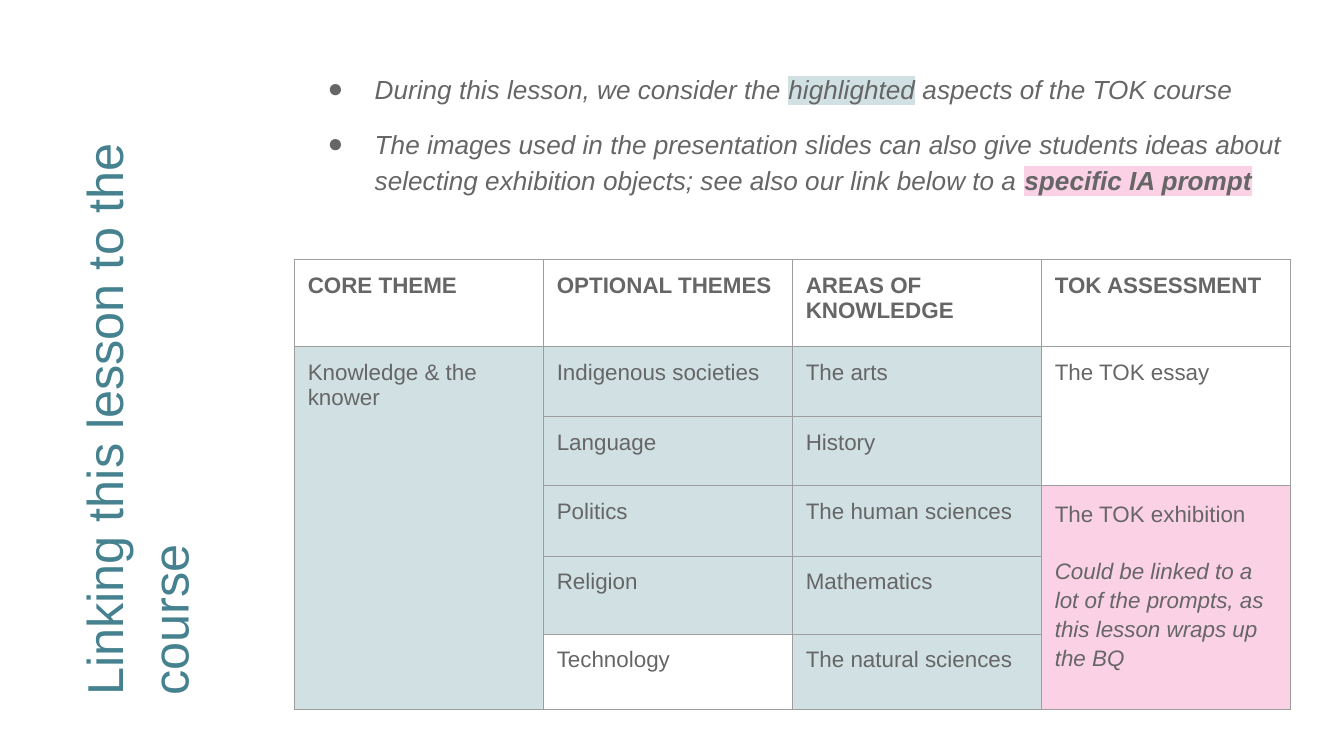
from dataclasses import dataclass

from lxml.etree import SubElement
from pptx import Presentation
from pptx.dml.color import RGBColor as Rgb
from pptx.enum.text import MSO_ANCHOR as Anchor
from pptx.oxml import parse_xml
from pptx.oxml.ns import nsdecls, qn
from pptx.util import Pt

COLORS = {
    "title": "45818E",
    "text": "666666",
    "covered": "D0E0E3",
    "assessed": "FBD1E6",
    "plain": "FFFFFF",
    "border": "9E9E9E",
}
FONT = "Arial"
INSET = 7.2
COLUMN_WIDTH = 133.4
ROW_HEIGHTS = [46.4, 37.4, 37, 38, 41.8, 40.2]


@dataclass
class Span:
    text: str
    highlight: str = ""
    bold: bool = False


@dataclass
class Entry:
    """One table cell; it may cover several rows."""
    text: str
    fill: str = "covered"
    rows: int = 1
    note: str = ""


BULLETS = [
    [Span("During this lesson, we consider the "), Span("highlighted", "covered"),
     Span(" aspects of the TOK course")],
    [Span("The images used in the presentation slides can also give students ideas about "
          "selecting exhibition objects; see also our link below to a "),
     Span("specific IA prompt", "assessed", True)],
]

COLUMNS = {
    "CORE THEME": [Entry("Knowledge & the knower", rows=5)],
    "OPTIONAL THEMES": [
        Entry("Indigenous societies"), Entry("Language"), Entry("Politics"),
        Entry("Religion"), Entry("Technology", "plain"),
    ],
    "AREAS OF KNOWLEDGE": [
        Entry("The arts"), Entry("History"), Entry("The human sciences"),
        Entry("Mathematics"), Entry("The natural sciences"),
    ],
    "TOK ASSESSMENT": [
        Entry("The TOK essay", "plain", 2),
        Entry("The TOK exhibition", "assessed", 3,
              "Could be linked to a lot of the prompts, as this lesson wraps up the BQ"),
    ],
}


def style(paragraph, size: float, color: str = "text", bold: bool = False,
          italic: bool = False) -> None:
    font = paragraph.font
    font.name, font.size, font.bold, font.italic = FONT, Pt(size), bold, italic
    font.color.rgb = Rgb.from_string(COLORS[color])


def add_text_frame(slide, left: float, top: float, width: float, height: float,
                   rotation: float = 0):
    box = slide.shapes.add_textbox(Pt(left), Pt(top), Pt(width), Pt(height))
    box.rotation = rotation
    frame = box.text_frame
    frame.word_wrap = True
    frame.vertical_anchor = Anchor.TOP
    frame.margin_left = frame.margin_right = Pt(INSET)
    frame.margin_top = frame.margin_bottom = Pt(INSET)
    return frame


def add_bullet(paragraph) -> None:
    properties = paragraph._p.get_or_add_pPr()
    properties.set("marL", str(Pt(36)))
    properties.set("indent", str(Pt(-25.2)))
    color = SubElement(properties, qn("a:buClr"))
    SubElement(color, qn("a:srgbClr"), val=COLORS["text"])
    SubElement(properties, qn("a:buFont"), typeface=FONT)
    SubElement(properties, qn("a:buChar"), char="●")


def add_span(paragraph, span: Span) -> None:
    run = paragraph.add_run()
    run.text = span.text
    if span.bold:
        run.font.bold = True
    if span.highlight:
        highlight = SubElement(run._r.get_or_add_rPr(), qn("a:highlight"))
        SubElement(highlight, qn("a:srgbClr"), val=COLORS[span.highlight])


def draw_title(slide) -> None:
    frame = add_text_frame(slide, -95, 153.4, 350.6, 102.2, rotation=270)
    paragraph = frame.paragraphs[0]
    paragraph.text = "Linking this lesson to the course"
    paragraph.line_spacing = 1.08
    style(paragraph, 27, "title")


def draw_bullets(slide) -> None:
    frame = add_text_frame(slide, 157.7, 29.5, 537.8, 87.8)
    for index, spans in enumerate(BULLETS):
        paragraph = frame.add_paragraph() if index else frame.paragraphs[0]
        paragraph.line_spacing = 1.15
        if index:
            paragraph.space_before = Pt(10)
        add_bullet(paragraph)
        style(paragraph, 14, italic=True)
        for span in spans:
            add_span(paragraph, span)


def format_cell(cell, fill: str) -> None:
    cell.margin_left = cell.margin_right = Pt(INSET)
    cell.margin_top = cell.margin_bottom = Pt(INSET)
    cell.fill.solid()
    cell.fill.fore_color.rgb = Rgb.from_string(COLORS[fill])
    properties = cell._tc.get_or_add_tcPr()
    for position, side in enumerate(("lnL", "lnR", "lnT", "lnB")):
        properties.insert(position, parse_xml(
            f'<a:{side} {nsdecls("a")} w="{Pt(0.75)}"><a:solidFill>'
            f'<a:srgbClr val="{COLORS["border"]}"/></a:solidFill></a:{side}>'))


def fill_entry(table, row: int, column: int, entry: Entry, bold: bool) -> None:
    for covered_row in range(row, row + entry.rows):
        format_cell(table.cell(covered_row, column), entry.fill)
    cell = table.cell(row, column)
    if entry.rows > 1:
        cell.merge(table.cell(row + entry.rows - 1, column))
    paragraph = cell.text_frame.paragraphs[0]
    paragraph.text = entry.text
    style(paragraph, 12, bold=bold)
    if entry.note:
        note = cell.text_frame.add_paragraph()
        note.text = entry.note
        note.space_before = Pt(15)
        style(note, 12, italic=True)
        paragraph.line_spacing = note.line_spacing = 1.15


def draw_table(slide) -> None:
    frame = slide.shapes.add_table(
        len(ROW_HEIGHTS), len(COLUMNS), Pt(157.7), Pt(139.2),
        Pt(COLUMN_WIDTH * len(COLUMNS)), Pt(sum(ROW_HEIGHTS)))
    table = frame.table
    table.first_row = table.horz_banding = False
    for row, height in zip(table.rows, ROW_HEIGHTS):
        row.height = Pt(height)
    for column, (heading, entries) in enumerate(COLUMNS.items()):
        table.columns[column].width = Pt(COLUMN_WIDTH)
        row = 0
        for entry in [Entry(heading, "plain"), *entries]:
            fill_entry(table, row, column, entry, bold=row == 0)
            row += entry.rows


def main() -> None:
    presentation = Presentation()
    presentation.slide_width, presentation.slide_height = Pt(720), Pt(405)
    slide = presentation.slides.add_slide(presentation.slide_layouts[6])
    draw_title(slide)
    draw_bullets(slide)
    draw_table(slide)
    presentation.save("out.pptx")


if __name__ == "__main__":
    main()
